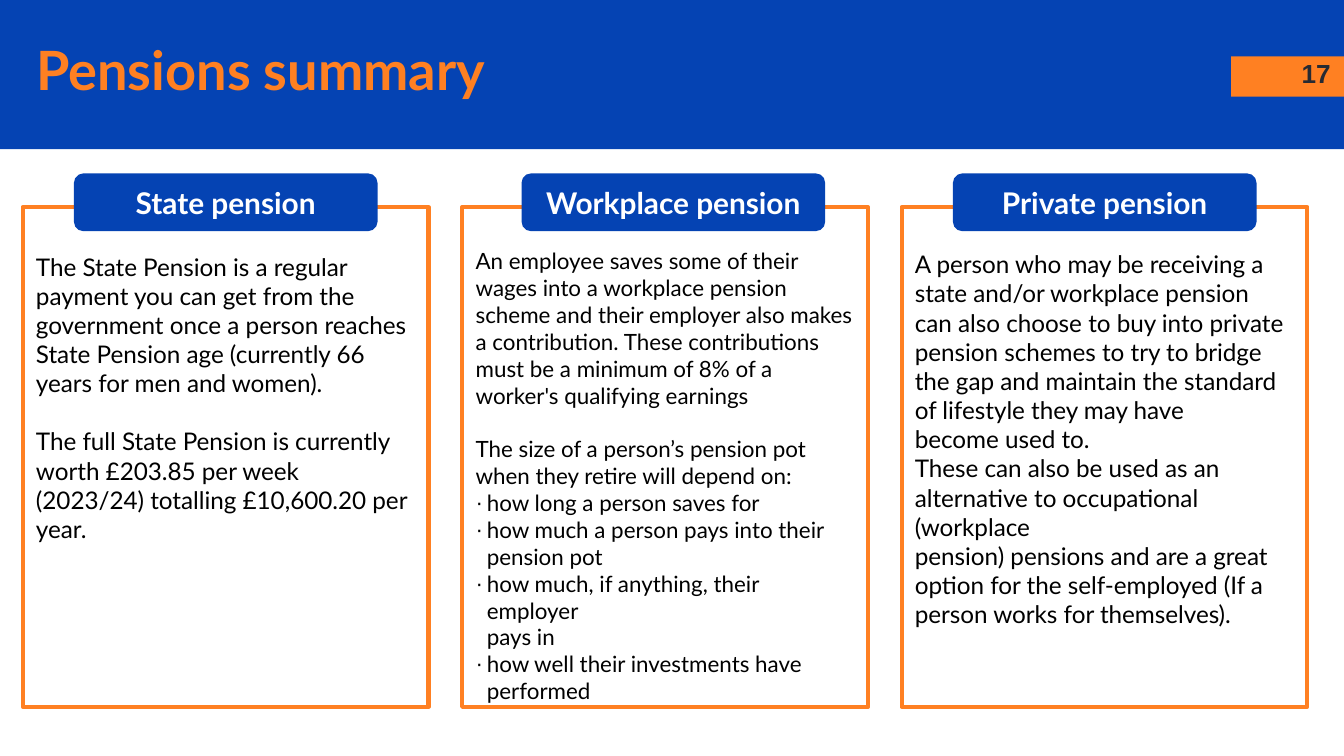
from dataclasses import dataclass

from lxml.etree import SubElement
from pptx import Presentation
from pptx.dml.color import RGBColor
from pptx.enum.shapes import MSO_SHAPE
from pptx.enum.text import MSO_ANCHOR, MSO_AUTO_SIZE, PP_ALIGN
from pptx.oxml.ns import qn
from pptx.util import Pt


@dataclass(frozen=True)
class Theme:
    blue: str = "0543B3"
    orange: str = "FF8022"
    white: str = "FFFFFF"
    black: str = "000000"
    dark: str = "262A33"
    font: str = "Lato"
    plain: str = "Arial"
    title: float = 29
    head: float = 16
    number: float = 14
    inset: float = 7.2


@dataclass(frozen=True)
class Box:
    left: float
    top: float
    width: float
    height: float


@dataclass(frozen=True)
class Card:
    head: str
    tab: float
    size: float
    inset: float
    lines: tuple
    gap: int = -1
    points: tuple = ()


THEME = Theme()
LEFT, STEP = 12.2, 235.4

CARDS = (
    Card("State pension", 39.6, 13, 24, (
        "The State Pension is a regular payment you can get from the",
        "government once a person reaches State Pension age (currently 66",
        "years for men and women).",
        "The full State Pension is currently worth £203.85 per week",
        "(2023/24) totalling £10,600.20 per year.",
    ), gap=3),
    Card("Workplace pension", 279.4, 12, 21.6, (
        "An employee saves some of their wages into a workplace pension scheme "
        "and their employer also makes a contribution. These contributions",
        "must be a minimum of 8% of a worker's qualifying earnings",
        "The size of a person’s pension pot when they retire will depend on:",
    ), gap=2, points=(
        "how long a person saves for",
        "how much a person pays into their\vpension pot",
        "how much, if anything, their employer\vpays in",
        "how well their investments have\vperformed",
    )),
    Card("Private pension", 510.5, 13, 22.8, (
        "A person who may be receiving a state and/or workplace pension",
        "can also choose to buy into private pension schemes to try to bridge",
        "the gap and maintain the standard of lifestyle they may have",
        "become used to.",
        "These can also be used as an alternative to occupational (workplace",
        "pension) pensions and are a great option for the self-employed (If a",
        "person works for themselves).",
    )),
)


def place(shape, box: Box) -> None:
    shape.left, shape.top = Pt(box.left), Pt(box.top)
    shape.width, shape.height = Pt(box.width), Pt(box.height)


def block(slide, box: Box, fill: str | None, kind=MSO_SHAPE.RECTANGLE):
    shape = slide.shapes.add_shape(kind, 0, 0, 0, 0)
    place(shape, box)
    shape.shadow.inherit = False
    shape.line.fill.background()
    if fill:
        shape.fill.solid()
        shape.fill.fore_color.rgb = RGBColor.from_string(fill)
    else:
        shape.fill.background()
    return shape


def frame(shape, anchor, top: float = THEME.inset):
    text = shape.text_frame
    text.word_wrap = True
    text.auto_size = MSO_AUTO_SIZE.NONE
    text.vertical_anchor = anchor
    text.margin_left = text.margin_right = text.margin_bottom = Pt(THEME.inset)
    text.margin_top = Pt(top)
    return text


def style(par, size: float, color: str, bold: bool = False,
          align=PP_ALIGN.LEFT, font: str = THEME.font) -> None:
    par.alignment = align
    for run in par.runs:
        run.font.size, run.font.bold, run.font.name = Pt(size), bold, font
        run.font.color.rgb = RGBColor.from_string(color)


def mark(par, point: bool) -> None:
    """Give the paragraph a hanging dot, or clear any inherited bullet."""
    props = par._p.get_or_add_pPr()
    hang = Pt(6) if point else 0
    props.set("marL", str(hang))
    props.set("indent", str(-hang))
    if point:
        SubElement(props, qn("a:buChar")).set("char", "·")
    else:
        SubElement(props, qn("a:buNone"))


def panel(shape, card: Card, box: Box) -> None:
    place(shape, box)
    shape.line.color.rgb = RGBColor.from_string(THEME.orange)
    shape.line.width = Pt(2.25)
    text = frame(shape, MSO_ANCHOR.TOP, card.inset)
    text.text = "\n".join(card.lines + card.points)
    for i, par in enumerate(text.paragraphs):
        mark(par, i >= len(card.lines))
        par.space_before = Pt(card.size * 1.2 if i == card.gap else 0)
        style(par, card.size, THEME.black)


def tab(slide, card: Card) -> None:
    shape = block(slide, Box(card.tab, 92.9, 162.7, 31), THEME.blue,
                  MSO_SHAPE.ROUNDED_RECTANGLE)
    text = frame(shape, MSO_ANCHOR.MIDDLE)
    text.text = card.head
    style(text.paragraphs[0], THEME.head, THEME.white, True, PP_ALIGN.CENTER)


def header(slide) -> None:
    band = block(slide, Box(0, 0, 720, 79.9), THEME.blue)
    title = slide.shapes.title
    title.element.addprevious(band.element)
    place(title, Box(12.2, 12.2, 535.7, 49.7))
    text = frame(title, MSO_ANCHOR.TOP)
    text.text = "Pensions summary"
    style(text.paragraphs[0], THEME.title, THEME.orange, True)

    block(slide, Box(659.5, 30.2, 60.5, 21.6), THEME.orange)
    number = slide.shapes.add_textbox(Pt(676.8), Pt(23.8), Pt(43.2), Pt(31))
    text = frame(number, MSO_ANCHOR.TOP)
    text.text = "17"
    style(text.paragraphs[0], THEME.number, THEME.dark, True,
          PP_ALIGN.RIGHT, THEME.plain)


def main() -> None:
    deck = Presentation()
    deck.slide_width, deck.slide_height = Pt(720), Pt(405)
    slide = deck.slides.add_slide(deck.slide_layouts[1])
    header(slide)
    for i, card in enumerate(CARDS):
        box = Box(LEFT + i * STEP, 110.9, 217.4, 267.8)
        shape = slide.placeholders[1] if card.points else block(slide, box, None)
        panel(shape, card, box)
        tab(slide, card)
    deck.save("out.pptx")


if __name__ == "__main__":
    main()
